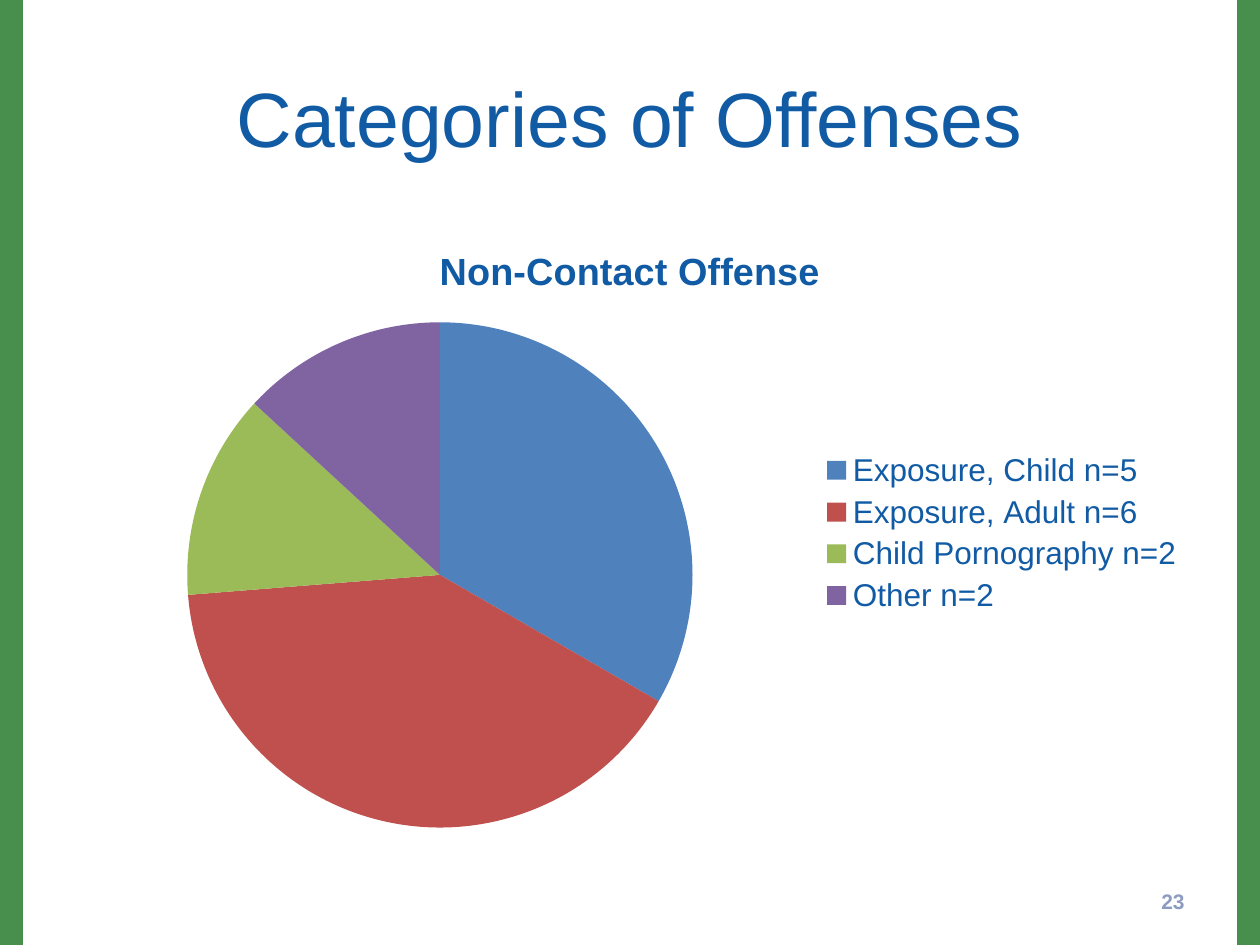
from pptx import Presentation
from pptx.chart.data import CategoryChartData
from pptx.dml.color import RGBColor
from pptx.enum.chart import XL_CHART_TYPE as ChartType, XL_LEGEND_POSITION as LegendPosition
from pptx.enum.shapes import MSO_SHAPE as Shape
from pptx.enum.text import MSO_ANCHOR as Anchor, PP_ALIGN as Align
from pptx.util import Pt

PX = 914400 / 126
WIDTH, HEIGHT = 1260, 945
FONT = "Arial"
GREEN, BLUE, MUTED = "488F4D", "115BA4", "8C9BC0"
OFFENSES = [
    ("Exposure, Child n=5", 33, "4F81BD"),
    ("Exposure, Adult n=6", 40, "C0504D"),
    ("Child Pornography n=2", 13, "9BBB59"),
    ("Other n=2", 13, "8064A2"),
]


def px(*lengths):
    return [round(length * PX) for length in lengths]


def color(code):
    return RGBColor.from_string(code)


def style_font(font, size, code, bold=False):
    font.name, font.size, font.bold = FONT, Pt(size), bold
    font.color.rgb = color(code)


def add_text(page, box, text, size=18, code=BLUE, bold=False, align=Align.LEFT):
    frame = page.shapes.add_textbox(*px(*box)).text_frame
    frame.word_wrap = True
    frame.vertical_anchor = Anchor.MIDDLE
    para = frame.paragraphs[0]
    para.alignment = align
    span = para.add_run()
    span.text = text
    style_font(span.font, size, code, bold)


def add_side_bars(page, box, bar_width):
    left, top, width, height = box
    for bar_left in (left + width - bar_width, left):
        bar = page.shapes.add_shape(Shape.RECTANGLE, *px(bar_left, top, bar_width, height))
        bar.shadow.inherit = False
        bar.fill.solid()
        bar.fill.fore_color.rgb = bar.line.color.rgb = color(GREEN)
        bar.line.width = Pt(2)


def add_offense_pie(page, box, title):
    names, shares, codes = zip(*OFFENSES)
    data = CategoryChartData()
    data.categories = names
    data.add_series(title, shares)
    chart = page.shapes.add_chart(ChartType.PIE, *px(*box), data).chart
    style_font(chart.font, 18, BLUE)

    # Chart title
    chart.has_title = True
    chart.chart_title.include_in_layout = False
    para = chart.chart_title.text_frame.paragraphs[0]
    span = para.add_run()
    span.text = title
    style_font(span.font, 21.6, BLUE, bold=True)

    # Legend
    chart.has_legend = True
    chart.legend.position = LegendPosition.RIGHT
    chart.legend.include_in_layout = False
    style_font(chart.legend.font, 18, BLUE)

    # Slices
    plot = chart.plots[0]
    plot.vary_by_categories = True
    for index, code in enumerate(codes):
        fill = plot.series[0].points[index].format.fill
        fill.solid()
        fill.fore_color.rgb = color(code)


def main():
    deck = Presentation()
    deck.slide_width, deck.slide_height = px(WIDTH, HEIGHT)
    page = deck.slides.add_slide(deck.slide_layouts[6])

    add_side_bars(page, (0, 0, WIDTH, HEIGHT), 21)
    add_text(page, (63, 38, 1134, 158), "Categories of Offenses", size=44, align=Align.CENTER)
    add_offense_pie(page, (63, 221, 1134, 624), "Non-Contact Offense")
    add_text(page, (903, 876, 294, 50), "23", size=12, code=MUTED, bold=True, align=Align.RIGHT)

    deck.save("out.pptx")


if __name__ == "__main__":
    main()
